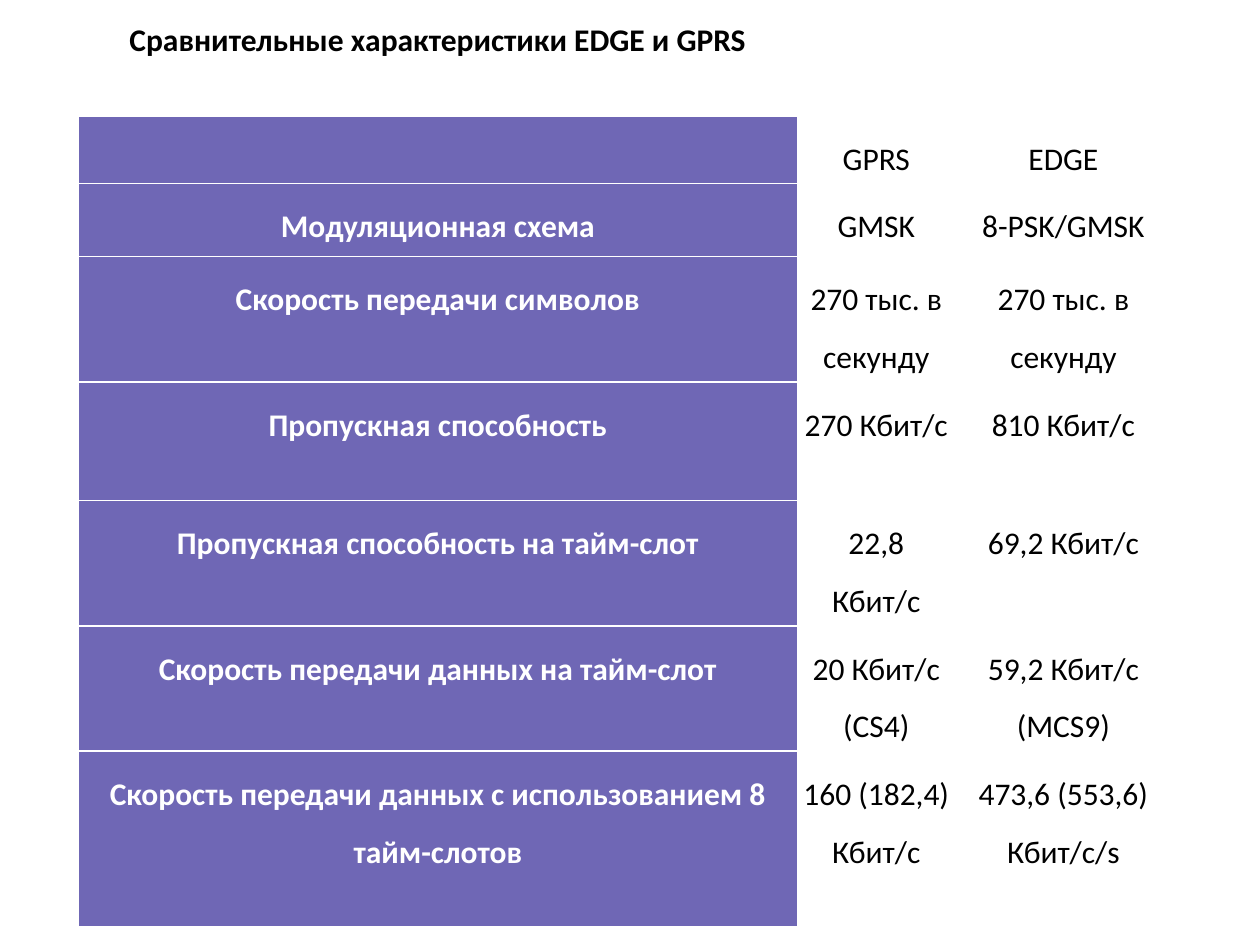
"""Build a slide with a table comparing EDGE and GPRS."""
from dataclasses import dataclass
from typing import NamedTuple

from pptx import Presentation
from pptx.dml.color import RGBColor
from pptx.enum.text import PP_ALIGN
from pptx.table import _Cell
from pptx.util import Inches, Pt

CENTER = PP_ALIGN.CENTER


@dataclass(frozen=True)
class Theme:
    font: str = "Calibri"
    size: float = 18
    after: float = 6
    lead: float = 1.5
    inset: float = 0.04
    dark: str = "000000"
    light: str = "FFFFFF"
    violet: str = "6F67B5"


class Row(NamedTuple):
    height: float
    label: str
    gprs: str = ""
    edge: str = ""


THEME = Theme()
WIDTHS = (5.71, 1.25, 1.72)
ROWS = (
    Row(0.94, "Сравнительные характеристики EDGE и GPRS"),
    Row(0.51, "", "GPRS", "EDGE"),
    Row(0.58, "Модуляционная схема", "GMSK", "8-PSK/GMSK"),
    Row(0.95, "Скорость передачи символов", "270 тыс. в секунду", "270 тыс. в секунду"),
    Row(0.94, "Пропускная способность", "270 Кбит/с", "810 Кбит/с"),
    Row(0.94, "Пропускная способность на тайм-слот", "22,8 Кбит/с", "69,2 Кбит/с"),
    Row(0.97, "Скорость передачи данных на тайм-слот", "20 Кбит/с (CS4)", "59,2 Кбит/с (MCS9)"),
    Row(1.39, "Скорость передачи данных с использованием 8 тайм-слотов",
        "160 (182,4) Кбит/с", "473,6 (553,6) Кбит/с/s"),
)


def write(cell: _Cell, text: str, *, color: str, bold: bool) -> None:
    """Put centred, formatted text into a cell."""
    para = cell.text_frame.paragraphs[0]
    para.alignment = CENTER
    para.line_spacing = THEME.lead
    para.space_after = Pt(THEME.after)
    run = para.add_run()
    run.text = text
    run.font.name = THEME.font
    run.font.size = Pt(THEME.size)
    run.font.bold = bold
    run.font.color.rgb = RGBColor.from_string(color)


def paint(cell: _Cell, text: str, *, label: bool, title: bool) -> None:
    """Set the fill, margins and text of a cell."""
    inset = Inches(THEME.inset)
    cell.margin_left = cell.margin_right = inset
    cell.margin_top = cell.margin_bottom = inset
    filled = label and not title
    if filled:
        cell.fill.solid()
        cell.fill.fore_color.rgb = RGBColor.from_string(THEME.violet)
    else:
        cell.fill.background()
    if text:
        write(cell, text, color=THEME.light if filled else THEME.dark, bold=label)


def main() -> None:
    """Build and save the slide."""
    deck = Presentation()
    deck.slide_width, deck.slide_height = Inches(10), Inches(7.5)
    slide = deck.slides.add_slide(deck.slide_layouts[6])
    high = sum(row.height for row in ROWS)
    frame = slide.shapes.add_table(
        len(ROWS), len(WIDTHS), Inches(0.62), Inches(-0.02), Inches(sum(WIDTHS)), Inches(high))
    table = frame.table
    table.first_row = table.horz_banding = False
    for column, width in zip(table.columns, WIDTHS):
        column.width = Inches(width)
    for top, row in enumerate(ROWS):
        table.rows[top].height = Inches(row.height)
        for left, text in enumerate((row.label, row.gprs, row.edge)):
            paint(table.cell(top, left), text, label=left == 0, title=top == 0)
    deck.save("out.pptx")


if __name__ == "__main__":
    main()
